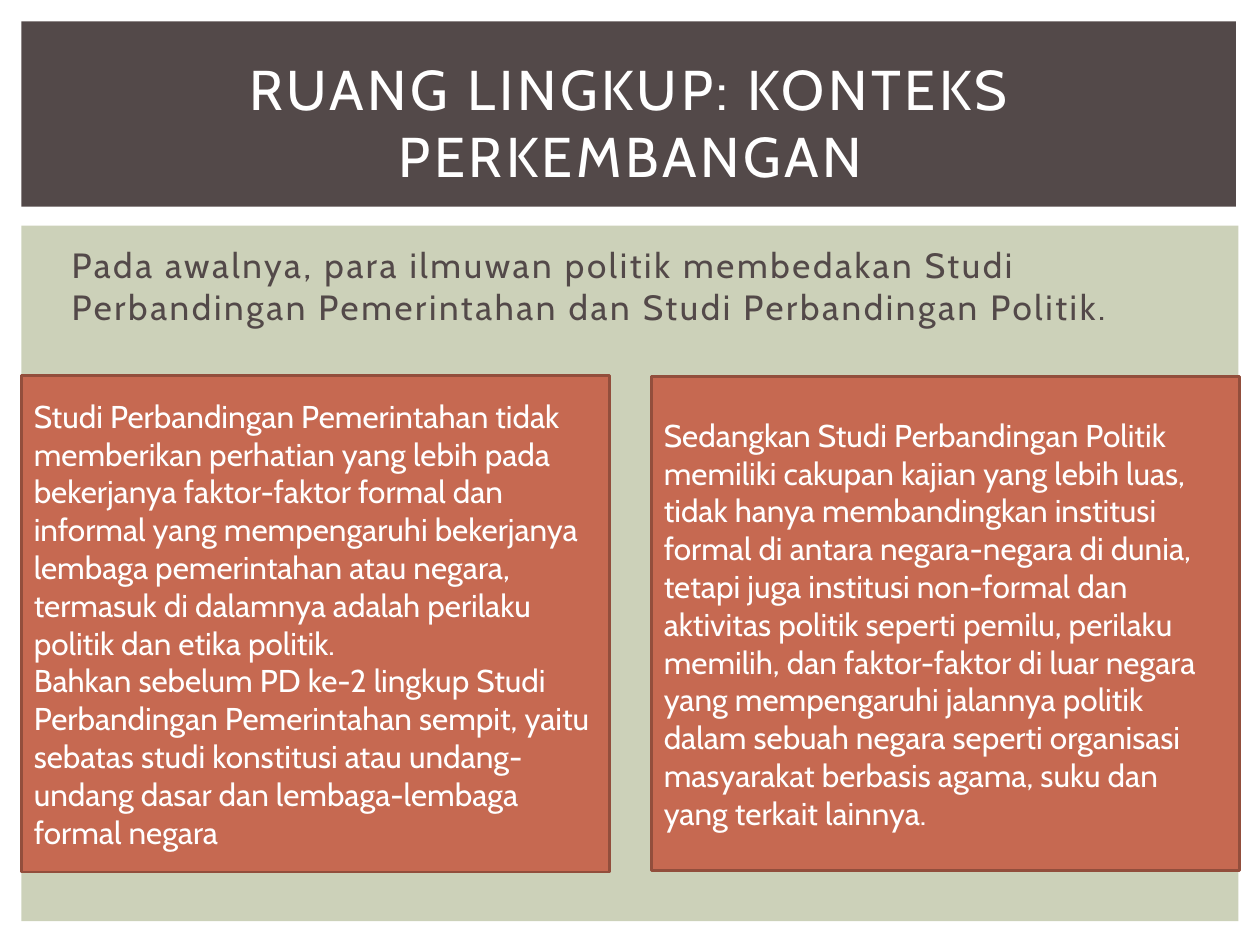
from dataclasses import dataclass

from pptx import Presentation
from pptx.dml.color import RGBColor
from pptx.enum.shapes import MSO_SHAPE
from pptx.enum.text import MSO_ANCHOR, PP_ALIGN
from pptx.util import Inches, Pt


@dataclass(frozen=True)
class Theme:
    font: str = "Cabin"
    dark: str = "534949"
    sage: str = "CCD1B9"
    rust: str = "C66951"
    edge: str = "924E3C"
    white: str = "FFFFFF"
    title: int = 32
    lead: int = 20
    body: int = 18


THEME = Theme()

TITLE = "RUANG LINGKUP: KONTEKS PERKEMBANGAN"
LEAD = (
    "Pada awalnya, para ilmuwan politik membedakan Studi Perbandingan "
    "Pemerintahan dan Studi Perbandingan Politik."
)
GOVERNMENT = [
    "Studi Perbandingan Pemerintahan tidak memberikan perhatian yang lebih "
    "pada bekerjanya faktor-faktor formal dan informal yang mempengaruhi "
    "bekerjanya lembaga pemerintahan atau negara, termasuk di dalamnya adalah "
    "perilaku politik dan etika politik.",
    "Bahkan sebelum PD ke-2 lingkup Studi Perbandingan Pemerintahan sempit, "
    "yaitu sebatas studi konstitusi atau undang-undang dasar dan "
    "lembaga-lembaga formal negara",
]
POLITICS = [
    "Sedangkan Studi Perbandingan Politik memiliki cakupan kajian yang lebih "
    "luas, tidak hanya membandingkan institusi formal di antara negara-negara "
    "di dunia, tetapi juga institusi non-formal dan aktivitas politik seperti "
    "pemilu, perilaku memilih, dan faktor-faktor di luar negara yang "
    "mempengaruhi jalannya politik dalam sebuah negara seperti organisasi "
    "masyarakat berbasis agama, suku dan yang terkait lainnya.",
]


def add_panel(slide, box, fill, edge=None):
    panel = slide.shapes.add_shape(MSO_SHAPE.RECTANGLE, *map(Inches, box))
    panel.shadow.inherit = False
    panel.fill.solid()
    panel.fill.fore_color.rgb = RGBColor.from_string(fill)
    if edge:
        panel.line.color.rgb = RGBColor.from_string(edge)
        panel.line.width = Pt(1.5)
    else:
        panel.line.fill.background()
    return panel


def write(shape, lines, size, color, align=PP_ALIGN.LEFT,
          anchor=MSO_ANCHOR.MIDDLE, track=0):
    """Fill a shape with paragraphs; track is letter spacing in points."""
    frame = shape.text_frame
    frame.word_wrap = True
    frame.vertical_anchor = anchor
    for index, line in enumerate(lines):
        para = frame.add_paragraph() if index else frame.paragraphs[0]
        para.alignment = align
        run = para.add_run()
        run.text = line
        run.font.name = THEME.font
        run.font.size = Pt(size)
        run.font.color.rgb = RGBColor.from_string(color)
        if track:
            run.font._element.set("spc", str(int(track * 100)))


def add_label(slide, box, text, size, color, **style):
    label = slide.shapes.add_textbox(*map(Inches, box))
    write(label, [text], size, color, **style)


def add_card(slide, box, lines):
    card = add_panel(slide, box, THEME.rust, THEME.edge)
    write(card, lines, THEME.body, THEME.white)


def main():
    deck = Presentation()
    deck.slide_width, deck.slide_height = Inches(10), Inches(7.5)
    slide = deck.slides.add_slide(deck.slide_layouts[6])

    add_panel(slide, (0.17, 1.79, 9.66, 5.52), THEME.sage)
    add_panel(slide, (0.17, 0.17, 9.64, 1.47), THEME.dark)
    add_label(slide, (0.47, 1.88, 9.14, 0.9), LEAD, THEME.lead, THEME.dark,
              anchor=MSO_ANCHOR.TOP, track=1.5)
    add_label(slide, (0.42, 0.39, 9.17, 1.15), TITLE, THEME.title, THEME.white,
              align=PP_ALIGN.CENTER, track=2)
    add_card(slide, (0.17, 2.98, 4.67, 3.94), GOVERNMENT)
    add_card(slide, (5.17, 2.99, 4.67, 3.92), POLITICS)

    deck.save("out.pptx")


if __name__ == "__main__":
    main()
